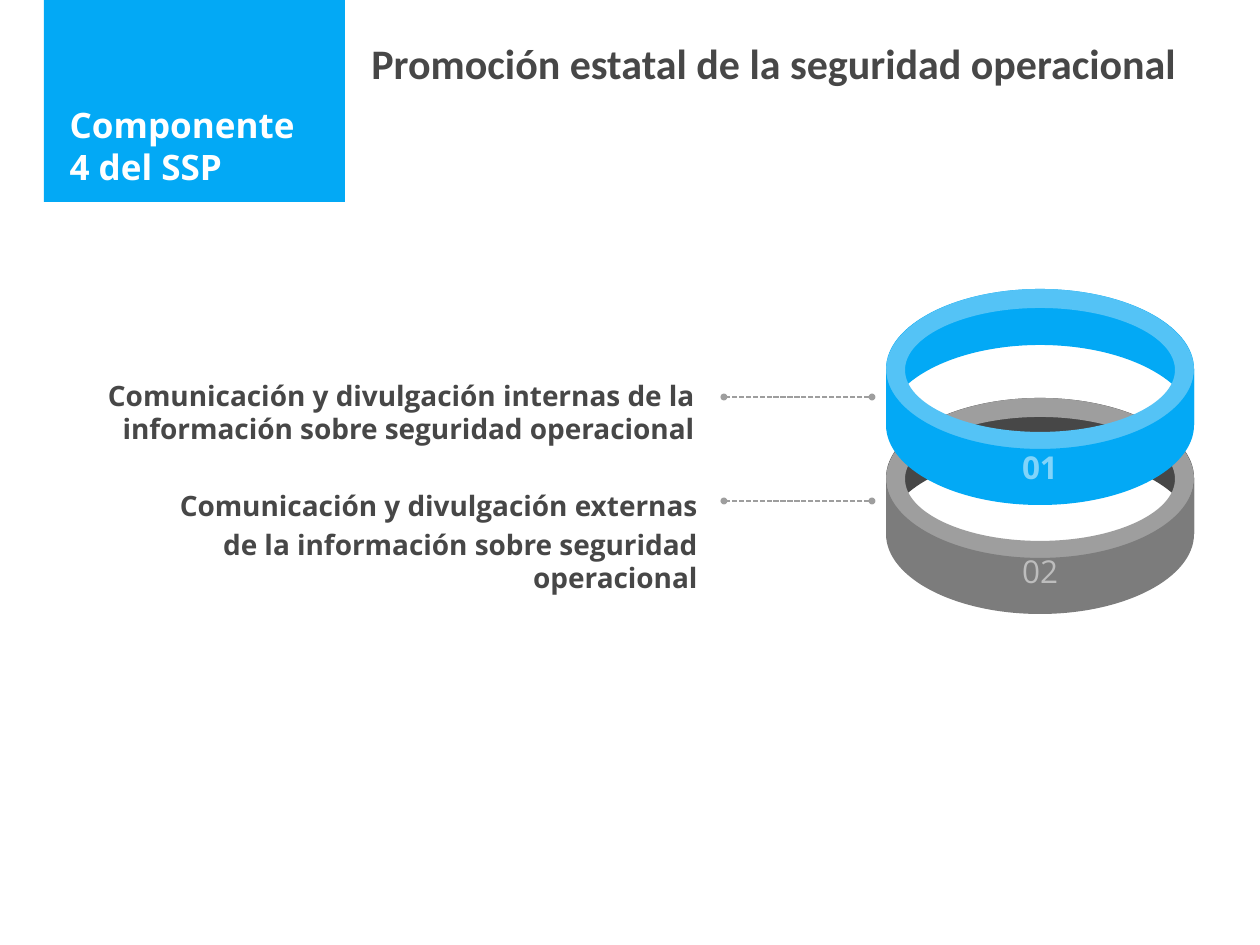
from dataclasses import dataclass

from lxml.etree import SubElement
from pptx import Presentation
from pptx.dml.color import RGBColor
from pptx.enum.dml import MSO_LINE
from pptx.enum.shapes import MSO_CONNECTOR, MSO_SHAPE
from pptx.enum.text import MSO_ANCHOR, MSO_AUTO_SIZE, PP_ALIGN
from pptx.oxml.ns import qn
from pptx.util import Emu, Pt


@dataclass(frozen=True)
class Theme:
    blue: str = "03A9F5"
    light_blue: str = "54C3F6"
    dark: str = "474747"
    gray: str = "7C7C7C"
    light_gray: str = "9E9E9E"
    white: str = "FFFFFF"
    heading_font: str = "Calibri"
    font: str = "Open Sans"
    heading_size: int = 24
    title_size: int = 20
    number_size: int = 18
    label_size: int = 16


THEME = Theme()
EMU_PER_PX = 914400 / 126
RING_CENTER_X = 1040
BAND_RADII = (154, 80)
RIM_RADII = (154, 81)
HOLE_RADII = (135, 62)
BAND_DEPTH = 56
CURVE = 0.55  # handle length of a quarter ellipse, as a share of its radius
COMPASS = [(1, 0), (0, 1), (-1, 0), (0, -1)]  # right, bottom, left, top


def px(length):
    return Emu(round(length * EMU_PER_PX))


def add_span(para, text, size, color, font=THEME.font, bold=True):
    span = para.add_run()
    span.text = text
    span.font.name = font
    span.font.size = Pt(size)
    span.font.bold = bold
    span.font.color.rgb = RGBColor.from_string(color)
    return span


def paint(shape, color):
    shape.shadow.inherit = False
    shape.fill.solid()
    shape.fill.fore_color.rgb = RGBColor.from_string(color)
    shape.line.fill.background()


def add_text_box(page, left, top, width, height):
    box = page.shapes.add_textbox(px(left), px(top), px(width), px(height))
    box.text_frame.word_wrap = True
    return box


def add_label(page, top, width, lines):
    frame = add_text_box(page, 44, top, width, 94).text_frame
    for index, line in enumerate(lines):
        para = frame.add_paragraph() if index else frame.paragraphs[0]
        para.alignment = PP_ALIGN.RIGHT
        para.space_before = Pt(3)
        add_span(para, line, THEME.label_size, THEME.dark)


def add_leader(page, y):
    """Draw a dashed line with a dot at each end."""
    leader = page.shapes.add_connector(
        MSO_CONNECTOR.STRAIGHT, px(872), px(y), px(724), px(y))
    leader.line.color.rgb = RGBColor.from_string(THEME.light_gray)
    leader.line.width = Pt(1)
    leader.line.dash_style = MSO_LINE.SQUARE_DOT
    line = leader.line._get_or_add_ln()
    for end in ("a:headEnd", "a:tailEnd"):
        SubElement(line, qn(end), type="oval", w="sm", len="sm")
    SubElement(leader._element.spPr, qn("a:effectLst"))


def ellipse_arc(center_y, radii, compass_stops, first="moveTo"):
    """Return path steps through the given stops, one curve per quarter."""
    def place(x, y):
        return RING_CENTER_X + radii[0] * x, center_y + radii[1] * y

    stops = [COMPASS[stop] for stop in compass_stops]
    steps = [(first, [place(*stops[0])])]
    for (x1, y1), (x2, y2) in zip(stops, stops[1:]):
        steps.append(("cubicBezTo", [place(x1 + CURVE * x2, y1 + CURVE * y2),
                                     place(x2 + CURVE * x1, y2 + CURVE * y1),
                                     place(x2, y2)]))
    return steps


def add_outline(page, contours, color):
    """Build a freeform on the curve ends, then give it its curved path."""
    ends = [(px(x), px(y)) for steps in contours for _, points in steps
            for x, y in points[-1:]]
    builder = page.shapes.build_freeform(*ends[0])
    builder.add_line_segments(ends[1:])
    shape = builder.convert_to_shape()
    path = shape._element.find(".//" + qn("a:path"))
    for child in list(path):
        path.remove(child)
    for steps in contours:
        for kind, points in steps:
            step = SubElement(path, qn("a:" + kind))
            for x, y in points:
                SubElement(step, qn("a:pt"), x=str(px(x) - shape.left),
                           y=str(px(y) - shape.top))
        SubElement(path, qn("a:close"))
    paint(shape, color)
    return shape


def add_ring(page, center_y, back, rim, front, number, number_inset, bold):
    low_y = center_y + BAND_DEPTH
    add_outline(page, [ellipse_arc(center_y, BAND_RADII, [0, 3, 2])
                       + ellipse_arc(low_y, BAND_RADII, [2, 3, 0], "lnTo")], back)
    add_outline(page, [ellipse_arc(center_y + 1, HOLE_RADII, [3, 0, 1, 2, 3]),
                       ellipse_arc(center_y + 1, RIM_RADII, [3, 2, 1, 0, 3])], rim)
    band = add_outline(page, [
        ellipse_arc(low_y, BAND_RADII, [0, 1, 2])
        + ellipse_arc(center_y, BAND_RADII, [2, 1, 0], "lnTo")], front)
    frame = band.text_frame
    frame.margin_left = frame.margin_right = frame.margin_bottom = 0
    frame.margin_top = px(number_inset)
    frame.vertical_anchor = MSO_ANCHOR.MIDDLE
    para = frame.paragraphs[0]
    para.alignment = PP_ALIGN.CENTER
    span = add_span(para, number, THEME.number_size, THEME.white, bold=bold)
    color = span._r.find(".//" + qn("a:srgbClr"))
    SubElement(color, qn("a:alpha"), val="50000")


def add_title(page, text):
    panel = page.shapes.add_shape(
        MSO_SHAPE.RECTANGLE, px(44), px(-1), px(301), px(203))
    paint(panel, THEME.blue)
    title = page.shapes.title
    title.left, title.top, title.width, title.height = map(px, (57, 10, 270, 184))
    panel._element.addnext(title._element)
    frame = title.text_frame
    frame.word_wrap = True
    frame.auto_size = MSO_AUTO_SIZE.NONE
    frame.vertical_anchor = MSO_ANCHOR.BOTTOM
    para = frame.paragraphs[0]
    para.alignment = PP_ALIGN.LEFT
    add_span(para, text, THEME.title_size, THEME.white)


def add_heading(page, text):
    box = add_text_box(page, 359, 31, 882, 63)
    add_span(box.text_frame.paragraphs[0], text, THEME.heading_size,
             THEME.dark, THEME.heading_font)


def main():
    deck = Presentation()
    deck.slide_width, deck.slide_height = px(1260), px(945)
    page = deck.slides.add_slide(deck.slide_layouts[0])
    subtitle = page.placeholders[1]._element
    subtitle.getparent().remove(subtitle)

    add_title(page, "Componente 4 del SSP")
    add_ring(page, 478, THEME.dark, THEME.light_gray, THEME.gray, "02", 50, False)
    add_label(page, 482, 666, ["Comunicación y divulgación externas",
                               "de la información sobre seguridad operacional"])
    add_leader(page, 501)
    add_ring(page, 369, THEME.blue, THEME.light_blue, THEME.blue, "01", 60, True)
    add_label(page, 372, 663, ["Comunicación y divulgación internas de la "
                               "información sobre seguridad operacional"])
    add_leader(page, 397)
    add_heading(page, "Promoción estatal de la seguridad operacional")
    deck.save("out.pptx")


if __name__ == "__main__":
    main()
